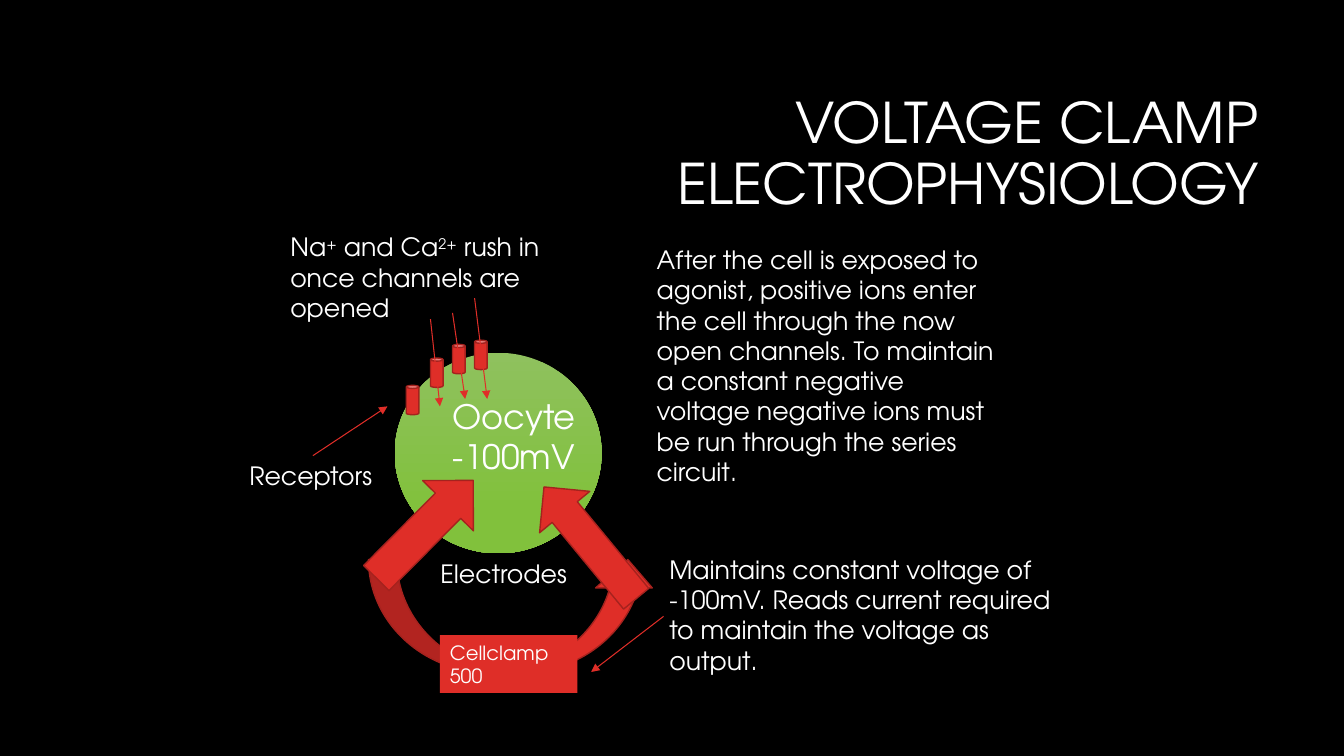
"""Build the voltage clamp electrophysiology slide."""
from pptx import Presentation
from pptx.dml.color import RGBColor
from pptx.enum.shapes import MSO_CONNECTOR, MSO_SHAPE
from pptx.enum.text import MSO_ANCHOR, MSO_AUTO_SIZE, PP_ALIGN
from pptx.oxml.ns import qn
from pptx.util import Pt
from lxml.etree import SubElement

PX = 9525
FONT = "TeX Gyre Adventor"
BLACK = RGBColor(0x00, 0x00, 0x00)
WHITE = RGBColor(0xFF, 0xFF, 0xFF)
RED = RGBColor(0xDF, 0x2E, 0x28)
DARK_RED = RGBColor(0xA5, 0x22, 0x1E)
LIGHT_GREEN = RGBColor(0x8F, 0xC1, 0x5E)
GREEN = RGBColor(0x81, 0xC1, 0x3C)


def write_text(shape, text, size, alignment=PP_ALIGN.LEFT):
    """Fill a shape with text; pieces between carets are superscript."""
    text_frame = shape.text_frame
    text_frame.text = text.replace("^", "")
    for paragraph, line in zip(text_frame.paragraphs, text.split("\n")):
        paragraph.alignment = alignment
        pieces = line.split("^")
        paragraph.runs[0].text = pieces[0]
        for index, piece in enumerate(pieces[1:], 1):
            run = paragraph.add_run()
            run.text = piece
            if index % 2:
                run.font._element.set("baseline", "30000")
        for run in paragraph.runs:
            run.font.name = FONT
            run.font.size = Pt(size)
            run.font.color.rgb = WHITE


def add_figure(kind, left, top, width, height, rotation=0):
    """Add a red preset shape with a dark red outline."""
    shape = slide.shapes.add_shape(kind, left * PX, top * PX, width * PX, height * PX)
    shape.rotation = rotation
    shape.shadow.inherit = False
    shape.fill.solid()
    shape.fill.fore_color.rgb = RED
    shape.line.color.rgb = DARK_RED
    shape.line.width = Pt(1)
    return shape


presentation = Presentation()
presentation.slide_width = 1280 * PX
presentation.slide_height = 720 * PX
slide = presentation.slides.add_slide(presentation.slide_layouts[5])
slide.background.fill.solid()
slide.background.fill.fore_color.rgb = BLACK

title = slide.shapes.title
title.left, title.top, title.width, title.height = (n * PX for n in (304, 81, 904, 135))
write_text(title, "VOLTAGE CLAMP ELECTROPHYSIOLOGY", 40, PP_ALIGN.RIGHT)
title.text_frame.word_wrap = True
title.text_frame.auto_size = MSO_AUTO_SIZE.NONE
title.text_frame.vertical_anchor = MSO_ANCHOR.MIDDLE
title.text_frame.paragraphs[0].line_spacing = 0.9

add_figure(MSO_SHAPE.CURVED_UP_ARROW, 351, 533, 274, 108)

oocyte = add_figure(MSO_SHAPE.OVAL, 376, 336, 197, 191)
oocyte.line.fill.background()
oocyte.fill.gradient()
oocyte.fill.gradient_angle = 270
for stop, position, color in zip(oocyte.fill.gradient_stops, (0, 0.78), (LIGHT_GREEN, GREEN)):
    stop.position = position
    stop.color.rgb = color

for left, top in ((452, 324), (431, 328), (387, 367), (410, 341)):
    add_figure(MSO_SHAPE.CAN, left, top, 12, 28)

add_figure(MSO_SHAPE.LEFT_ARROW, 493, 486, 138, 62, 50.5)
add_figure(MSO_SHAPE.LEFT_ARROW, 339, 470, 131, 68, 134.8)

amplifier = add_figure(MSO_SHAPE.RECTANGLE, 419, 605, 131, 55)
amplifier.line.fill.background()
write_text(amplifier, "Cellclamp 500", 14)

arrows = (
    (298, 434, 369, 387),
    (452, 284, 464, 380),
    (410, 304, 419, 387),
    (431, 298, 443, 380),
    (632, 587, 563, 640),
)
for arrow in arrows:
    connector = slide.shapes.add_connector(MSO_CONNECTOR.STRAIGHT, *(n * PX for n in arrow))
    connector.line.color.rgb = RED
    connector.line.width = Pt(0.75)
    SubElement(connector.line._get_or_add_ln(), qn("a:tailEnd"), type="triangle")
    SubElement(connector._element.spPr, qn("a:effectLst"))

labels = (
    (420, 372, 139, 87, 24, PP_ALIGN.CENTER, "Oocyte\n-100mV"),
    (228, 434, 137, 38, 18, PP_ALIGN.LEFT, "Receptors"),
    (410, 527, 159, 38, 18, PP_ALIGN.LEFT, "Electrodes"),
    (267, 216, 298, 97, 18, PP_ALIGN.LEFT,
     "Na^+^ and Ca^2+^ rush in once channels are opened"),
    (628, 523, 391, 126, 18, PP_ALIGN.LEFT,
     "Maintains constant voltage of\n"
     "-100mV. Reads current required to maintain the voltage as output."),
    (616, 228, 349, 242, 18, PP_ALIGN.LEFT,
     "After the cell is exposed to agonist, positive ions enter the cell through "
     "the now open channels. To maintain a constant negative voltage negative ions "
     "must be run through the series circuit."),
)
for left, top, width, height, size, alignment, text in labels:
    label = slide.shapes.add_textbox(left * PX, top * PX, width * PX, height * PX)
    label.text_frame.word_wrap = True
    write_text(label, text, size, alignment)

presentation.save("out.pptx")
